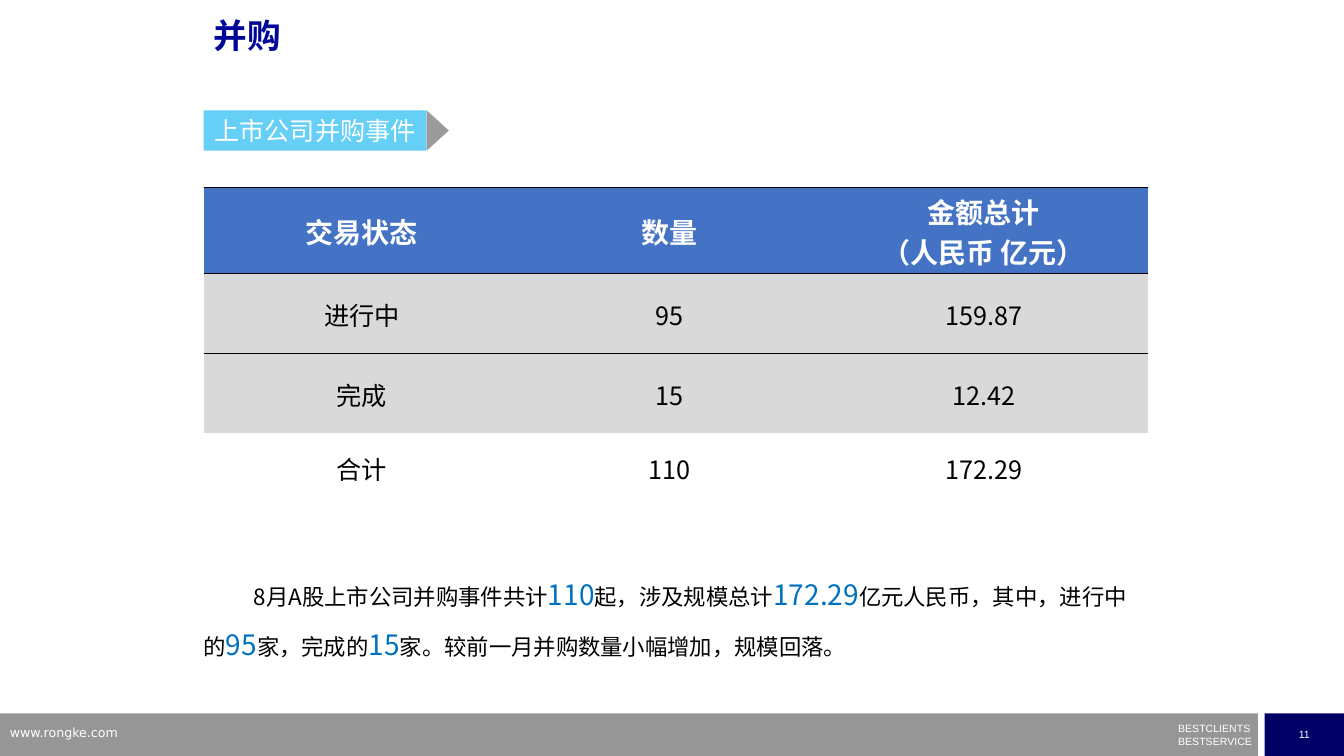
from lxml.etree import SubElement as Sub
from pptx import Presentation
from pptx.dml.color import RGBColor as RGB
from pptx.enum.shapes import MSO_SHAPE as Shape
from pptx.enum.text import MSO_ANCHOR as Anchor, PP_ALIGN as Align
from pptx.oxml.ns import qn
from pptx.util import Cm, Pt

COLORS = {
    "navy": "000066", "title": "000798", "bar": "969696", "sky": "00B0F0",
    "tip": "595959", "head": "4472C4", "band": "D9D9D9", "blue": "0070C0",
    "white": "FFFFFF", "black": "000000",
}
SANS = "Noto Sans CJK SC"
LEFT, WIDTH = Cm(5.13), Cm(23.8)


def style(para, size, color, face=SANS, bold=False, align=Align.LEFT):
    """Set the paragraph font, with the CJK face for Chinese text."""
    para.alignment = align
    font = para.font
    font.size, font.bold, font.name = Pt(size), bold, face
    font.color.rgb = RGB.from_string(COLORS[color])
    Sub(para._p.pPr.find(qn("a:defRPr")), qn("a:ea"), typeface=SANS)


def block(kind, box, color, alpha=None):
    """Add a plain filled shape; alpha is its opacity in percent."""
    shape = slide.shapes.add_shape(kind, *map(Cm, box))
    shape.shadow.inherit = False
    shape.line.fill.background()
    shape.fill.solid()
    shape.fill.fore_color.rgb = RGB.from_string(COLORS[color])
    if alpha:
        tint = shape._element.spPr.find(".//" + qn("a:srgbClr"))
        Sub(tint, qn("a:alpha"), val=str(alpha * 1000))
    return shape


prs = Presentation()
prs.slide_width, prs.slide_height = Cm(33.87), Cm(19.05)
slide = prs.slides.add_slide(prs.slide_layouts[6])

# Footer
block(Shape.RECTANGLE, (0, 17.98, 31.7, 1.07), "bar")
page = block(Shape.RECTANGLE, (31.87, 17.98, 2, 1.07), "navy").text_frame
page.word_wrap = False
page.text = "11"
style(page.paragraphs[0], 7.5, "white", "Arial", align=Align.CENTER)

motto = slide.shapes.add_textbox(Cm(29.69), Cm(18.34), Cm(1.93), Cm(0.51)).text_frame
motto.margin_left = motto.margin_right = motto.margin_top = motto.margin_bottom = 0
motto.word_wrap = True
motto.text = "BESTCLIENTS\nBESTSERVICE"
for para in motto.paragraphs:
    para.line_spacing = 0.5
    style(para, 7.5, "white", "Arial")
motto.paragraphs[1].space_before = Pt(4.3)

site = slide.shapes.add_textbox(0, Cm(18.14), Cm(8.13), Cm(0.66)).text_frame
site.word_wrap = True
site.text = "www.rongke.com"
style(site.paragraphs[0], 9, "white", "DejaVu Sans")

# Title and section label
title = slide.shapes.add_textbox(LEFT, Cm(0.36), Cm(22.86), Cm(1.78)).text_frame
title.word_wrap = True
title.text = "并购"
title.paragraphs[0].line_spacing = 0.9
style(title.paragraphs[0], 24, "title", "Arial", bold=True)

label = block(Shape.RECTANGLE, (5.13, 2.78, 5.62, 1.02), "sky", 60).text_frame
label.word_wrap = False
label.text = "上市公司并购事件"
style(label.paragraphs[0], 18, "white", align=Align.CENTER)
tip = block(Shape.ISOSCELES_TRIANGLE, (10.52, 3.01, 1.02, 0.56), "tip", 60)
tip.rotation = 90

# Summary
note = slide.shapes.add_textbox(LEFT, Cm(14.12), WIDTH, Cm(2.41)).text_frame
note.margin_left = note.margin_right = note.margin_top = note.margin_bottom = 0
note.word_wrap = True
para = note.paragraphs[0]
para.line_spacing = 1.5
para._p.get_or_add_pPr().set("indent", str(Cm(1.27)))
style(para, 16, "black")
parts = ["8月A股上市公司并购事件共计", "110", "起，涉及规模总计", "172.29",
         "亿元人民币，其中，进行中的", "95", "家，完成的", "15",
         "家。较前一月并购数量小幅增加，规模回落。"]
for i, part in enumerate(parts):
    run = para.add_run()
    run.text = part
    if i % 2:
        run.font.size = Pt(20)
        run.font.color.rgb = RGB.from_string(COLORS["blue"])

# Deal table
rows = [
    ("交易状态", "数量", "金额总计\v（人民币 亿元）"),
    ("进行中", "95", "159.87"),
    ("完成", "15", "12.42"),
    ("合计", "110", "172.29"),
]
fills = ["head", "band", "band", "white"]
deals = slide.shapes.add_table(4, 3, LEFT, Cm(4.72), WIDTH, Cm(7.95)).table
# Built-in table style without fills or grid
deals._tbl.tblPr.find(qn("a:tableStyleId")).text = "{2D5ABB26-0587-4C30-8999-92F81FD0307C}"
for col, width in zip(deals.columns, (7.98, 7.54, 8.28)):
    col.width = Cm(width)
for r, height in enumerate((2.18, 2.01, 2.01, 1.75)):
    deals.rows[r].height = Cm(height)
    for c, text in enumerate(rows[r]):
        cell = deals.cell(r, c)
        cell.margin_left = cell.margin_right = cell.margin_top = Cm(0.03)
        cell.margin_bottom = 0
        cell.vertical_anchor = Anchor.MIDDLE
        cell.text = text
        para = cell.text_frame.paragraphs[0]
        if r == 0:
            style(para, 20, "white", bold=True, align=Align.CENTER)
        else:
            style(para, 18, "black", align=Align.CENTER)
        for side in {0: ("lnT", "lnB"), 1: ("lnT",)}.get(r, ()):
            edge = Sub(cell._tc.get_or_add_tcPr(), qn("a:" + side), w=str(Pt(1)))
            Sub(Sub(edge, qn("a:solidFill")), qn("a:srgbClr"), val=COLORS["black"])
        cell.fill.solid()
        cell.fill.fore_color.rgb = RGB.from_string(COLORS[fills[r]])

prs.save("out.pptx")
